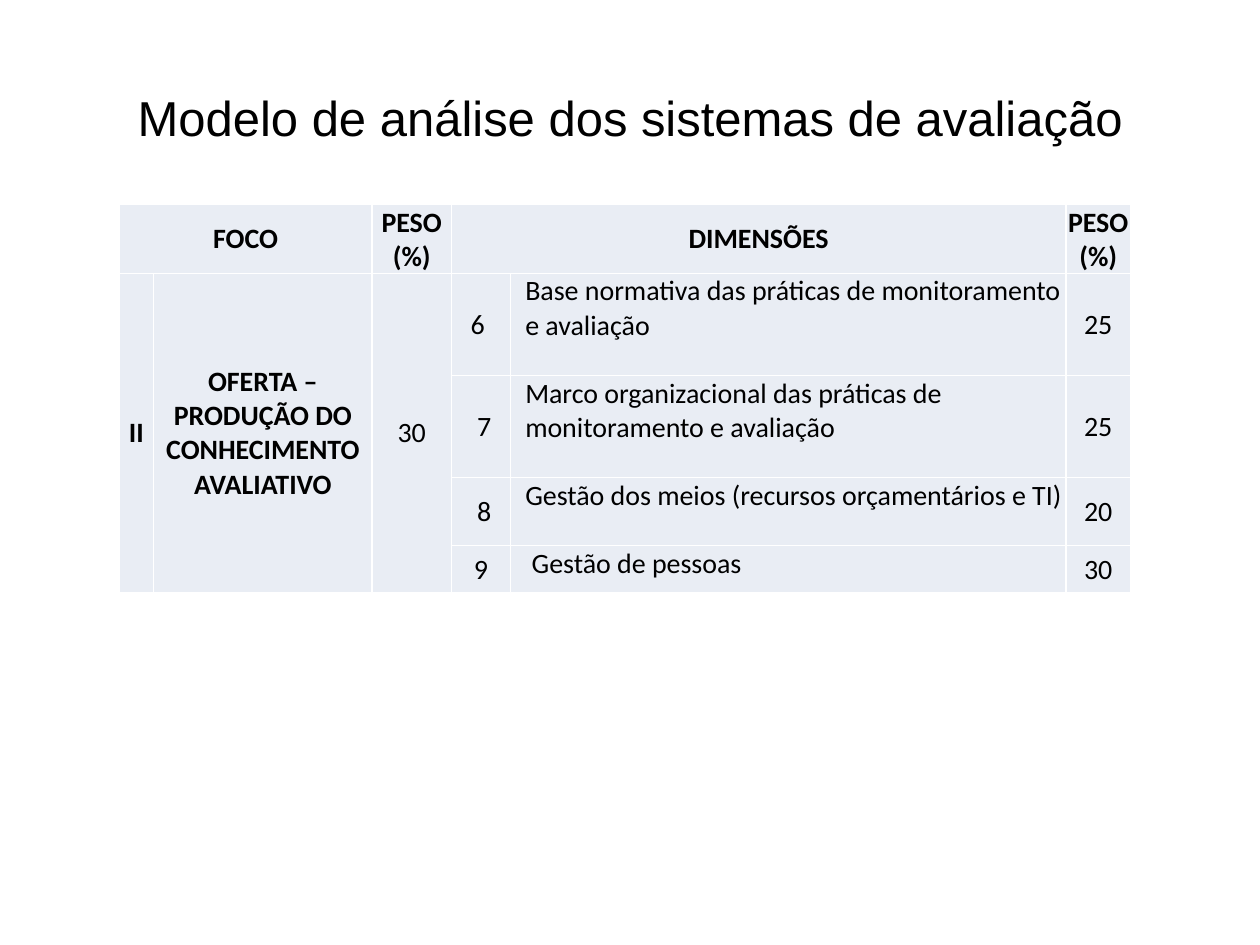
from dataclasses import dataclass

from lxml import etree
from pptx import Presentation
from pptx.dml.color import RGBColor
from pptx.enum.text import MSO_ANCHOR, PP_ALIGN
from pptx.oxml.ns import qn
from pptx.util import Cm, Pt

CENTER, LEFT = PP_ALIGN.CENTER, PP_ALIGN.LEFT
MIDDLE, TOP = MSO_ANCHOR.MIDDLE, MSO_ANCHOR.TOP


@dataclass(frozen=True)
class Theme:
    ink: RGBColor = RGBColor(0, 0, 0)
    fill: RGBColor = RGBColor(0xE9, 0xED, 0xF4)
    rule: str = "FFFFFF"
    head: str = "Arial"
    body: str = "Calibri"
    head_size: Pt = Pt(28)
    body_size: Pt = Pt(16)


THEME = Theme()
COLS = [0.7, 4.4, 1.6, 1.19, 11.2, 1.3]
ROWS = [1.39, 2.06, 2.06, 1.37, 0.94]
PAD, INDENT, NUDGE = 0.02, 0.3, 0.13

HEADS = {0: "FOCO", 2: "PESO (%)", 3: "DIMENSÕES", 5: "PESO (%)"}
FOCUS = ["II", "OFERTA – PRODUÇÃO DO CONHECIMENTO AVALIATIVO", "30"]
# number, dimension, weight, left and right shift of the number, extra indent
ITEMS = [
    ("6", "Base normativa das práticas de monitoramento e avaliação", "25", 0, NUDGE, 0),
    ("7", "Marco organizacional das práticas de monitoramento e avaliação", "25", NUDGE, 0, 0),
    ("8", "Gestão dos meios (recursos orçamentários e TI)", "20", NUDGE, 0, 0),
    ("9", "Gestão de pessoas", "30", 0, 0, NUDGE),
]


def style(para, font, size, bold=False, align=CENTER):
    para.alignment = align
    for run in para.runs:
        run.font.name, run.font.size, run.font.bold = font, size, bold
        run.font.color.rgb = THEME.ink


def add_title(slide, left, top, width, height):
    frame = slide.shapes.add_textbox(Cm(left), Cm(top), Cm(width), Cm(height)).text_frame
    frame.word_wrap = True
    frame.vertical_anchor = MIDDLE
    frame.text = "Modelo de análise dos sistemas de avaliação"
    style(frame.paragraphs[0], THEME.head, THEME.head_size)


def dress(cell):
    """Give a cell its fill and its thin borders."""
    cell.fill.solid()
    cell.fill.fore_color.rgb = THEME.fill
    props = cell._tc.get_or_add_tcPr()
    for spot, side in enumerate(("lnL", "lnR", "lnT", "lnB")):
        line = etree.Element(qn(f"a:{side}"), w=str(Pt(1)))
        paint = etree.SubElement(line, qn("a:solidFill"))
        etree.SubElement(paint, qn("a:srgbClr"), val=THEME.rule)
        props.insert(spot, line)


def write(cell, text, bold=False, align=CENTER, anchor=MIDDLE, left=0, right=0):
    cell.text_frame.text = text
    cell.vertical_anchor = anchor
    cell.margin_left, cell.margin_right = Cm(PAD + left), Cm(PAD + right)
    cell.margin_top, cell.margin_bottom = Cm(PAD), 0
    style(cell.text_frame.paragraphs[0], THEME.body, THEME.body_size, bold, align)


def add_grid(slide, left, top):
    table = slide.shapes.add_table(len(ROWS), len(COLS), Cm(left), Cm(top),
                                   Cm(sum(COLS)), Cm(sum(ROWS))).table
    table.first_row = table.horz_banding = False
    for col, width in zip(table.columns, COLS):
        col.width = Cm(width)
    for row, height in zip(table.rows, ROWS):
        row.height = Cm(height)
    for cell in table.iter_cells():
        dress(cell)

    # Header row
    for col in (0, 3):
        table.cell(0, col).merge(table.cell(0, col + 1))
    for col, text in HEADS.items():
        write(table.cell(0, col), text, bold=True)

    # Focus, spanning all dimensions
    for col, text in enumerate(FOCUS):
        table.cell(1, col).merge(table.cell(len(ITEMS), col))
        write(table.cell(1, col), text, bold=col < 2)

    # Dimensions with their weights
    for row, (number, name, weight, before, after, inset) in enumerate(ITEMS, 1):
        write(table.cell(row, 3), number, left=before, right=after)
        write(table.cell(row, 4), name, align=LEFT, anchor=TOP, left=INDENT - PAD + inset)
        write(table.cell(row, 5), weight)


def main():
    deck = Presentation()
    deck.slide_width, deck.slide_height = Cm(25.4), Cm(19.05)
    slide = deck.slides.add_slide(deck.slide_layouts[6])
    add_title(slide, 1.27, 0.76, 22.86, 3.18)
    add_grid(slide, 2.4, 4.12)
    deck.save("out.pptx")


if __name__ == "__main__":
    main()
